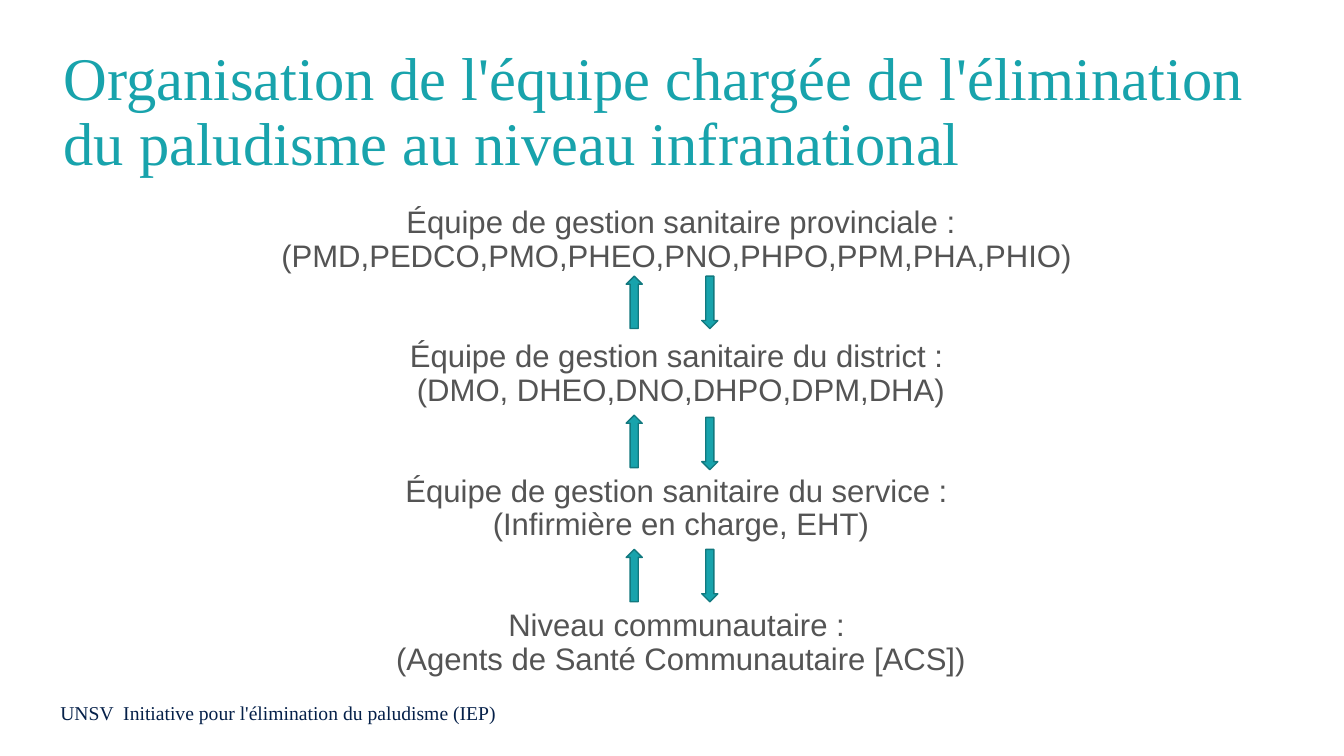
import dataclasses

import pptx
import pptx.dml.color
import pptx.enum.shapes
import pptx.enum.text
import pptx.util

WIDE, HIGH = 13.33, 7.5
TEAL, EDGE, GREY, NAVY = "18A3AC", "12797F", "545454", "052049"
SERIF, SANS = "Times New Roman", "Arial"
TIGHT = 0.9
ALIGN = pptx.enum.text.PP_ALIGN
ANCHOR = pptx.enum.text.MSO_ANCHOR


@dataclasses.dataclass
class Box:
    """Place and size in percent of the slide."""
    x: float
    y: float
    w: float
    h: float

    def lengths(self) -> list:
        shares = ((self.x, WIDE), (self.y, HIGH), (self.w, WIDE), (self.h, HIGH))
        return [pptx.util.Inches(part * full / 100) for part, full in shares]


@dataclasses.dataclass
class Style:
    font: str
    size: float
    tint: str
    align: ALIGN = ALIGN.LEFT
    anchor: ANCHOR = ANCHOR.TOP
    pitch: float = 1.0
    gap: float = 0  # points above each group but the first


@dataclasses.dataclass
class Label:
    box: Box
    style: Style
    groups: list[list[str]]


@dataclasses.dataclass
class Arrow:
    box: Box
    turn: int


def color(code: str) -> pptx.dml.color.RGBColor:
    return pptx.dml.color.RGBColor.from_string(code)


def draw_label(slide, label: Label) -> None:
    style = label.style
    frame = slide.shapes.add_textbox(*label.box.lengths()).text_frame
    frame.word_wrap = True
    frame.vertical_anchor = style.anchor
    frame.text = "\n".join(line for group in label.groups for line in group)
    heads = [i > 0 and j == 0
             for i, group in enumerate(label.groups) for j in range(len(group))]
    for para, head in zip(frame.paragraphs, heads):
        para.alignment = style.align
        para.line_spacing = style.pitch
        para.space_before = pptx.util.Pt(style.gap if head else 0)
        for run in para.runs:
            run.font.name = style.font
            run.font.size = pptx.util.Pt(style.size)
            run.font.color.rgb = color(style.tint)


def draw_arrow(slide, arrow: Arrow) -> None:
    kind = pptx.enum.shapes.MSO_SHAPE.UP_ARROW
    shape = slide.shapes.add_shape(kind, *arrow.box.lengths())
    shape.rotation = arrow.turn
    shape.shadow.inherit = False
    shape.fill.solid()
    shape.fill.fore_color.rgb = color(TEAL)
    shape.line.color.rgb = color(EDGE)
    shape.line.width = pptx.util.Pt(1)


# Footer, title and the four levels
LABELS = [
    Label(Box(3.75, 92, 39.83, 4.53), Style(SERIF, 14, NAVY),
          [["UNSV  Initiative pour l'élimination du paludisme (IEP)"]]),
    Label(Box(3.98, 5.33, 93.4, 19.33),
          Style(SERIF, 43.2, TEAL, anchor=ANCHOR.MIDDLE, pitch=TIGHT),
          [["Organisation de l'équipe chargée de l'élimination \v"
            "du paludisme au niveau infranational"]]),
    Label(Box(3.98, 26.67, 93.4, 63.47),
          Style(SANS, 22.2, GREY, ALIGN.CENTER, pitch=TIGHT, gap=48),
          [["Équipe de gestion sanitaire provinciale : "
            "(PMD,PEDCO,PMO,PHEO,PNO,PHPO,PPM,PHA,PHIO) "],
           ["Équipe de gestion sanitaire du district : ",
            "(DMO, DHEO,DNO,DHPO,DPM,DHA)"],
           ["Équipe de gestion sanitaire du service : ",
            "(Infirmière en charge, EHT)"],
           ["Niveau communautaire : ",
            "(Agents de Santé Communautaire [ACS])"]]),
]

# One pair of arrows, up and down, between levels
TOPS = [(36.53, 36.53), (54.93, 55.2), (72.67, 72.67)]
SIDES = [(46.59, 0), (52.21, 180)]
ARROWS = [Arrow(Box(x, y, 1.2, 6.93), turn)
          for pair in TOPS for y, (x, turn) in zip(pair, SIDES)]


def main() -> None:
    deck = pptx.Presentation()
    deck.slide_width = pptx.util.Inches(WIDE)
    deck.slide_height = pptx.util.Inches(HIGH)
    slide = deck.slides.add_slide(deck.slide_layouts[6])
    for label in LABELS:
        draw_label(slide, label)
    for arrow in ARROWS:
        draw_arrow(slide, arrow)
    deck.save("out.pptx")


if __name__ == "__main__":
    main()
